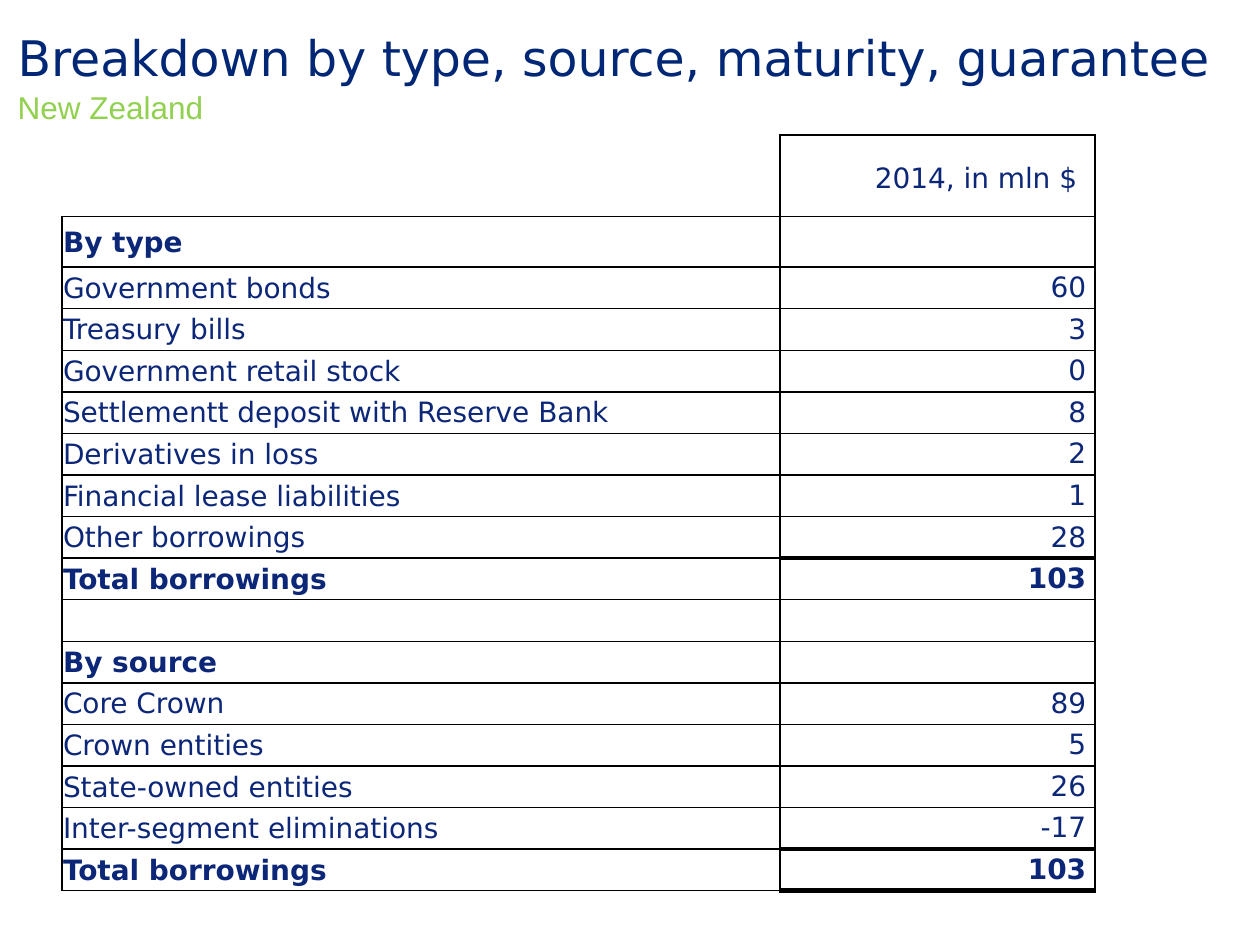
from pptx import Presentation
from pptx.dml.color import RGBColor
from pptx.enum.text import MSO_ANCHOR, MSO_AUTO_SIZE, PP_ALIGN
from pptx.oxml.ns import qn
from pptx.util import Inches, Pt
from lxml import etree

LEFT, RIGHT = PP_ALIGN.LEFT, PP_ALIGN.RIGHT
MIDDLE, BOTTOM = MSO_ANCHOR.MIDDLE, MSO_ANCHOR.BOTTOM
NO_AUTOFIT = MSO_AUTO_SIZE.NONE

NAVY = RGBColor(0x00, 0x27, 0x76)
INK = RGBColor(0x0C, 0x26, 0x78)
GREEN = RGBColor(0x92, 0xD0, 0x50)
WHITE = RGBColor(0xFF, 0xFF, 0xFF)
BLACK = RGBColor(0x00, 0x00, 0x00)
FONT = "DejaVu Sans"

TITLE_ONLY = 5
COLUMN_WIDTHS = (5.7, 2.5)
HEADER_HEIGHT, FIRST_GROUP_HEIGHT, ROW_HEIGHT = 0.65, 0.4, 0.33
THIN, THICK = 1, 3

ROWS = [
    ("", "2014, in mln $ "),
    ("By type", ""),
    ("Government bonds", "60"),
    ("Treasury bills", "3"),
    ("Government retail stock", "0"),
    ("Settlementt deposit with Reserve Bank", "8"),
    ("Derivatives in loss", "2"),
    ("Financial lease liabilities", "1"),
    ("Other borrowings", "28"),
    ("Total borrowings", "103"),
    ("", ""),
    ("By source", ""),
    ("Core Crown", "89"),
    ("Crown entities", "5"),
    ("State-owned entities", "26"),
    ("Inter-segment eliminations", "-17"),
    ("Total borrowings", "103"),
]
BOLD_LABELS = {"By type", "Total borrowings", "By source"}
# Horizontal rules around the totals, numbered by the row below them
THICK_RULES = {9, 16, 17}


def style_span(span, size, color, font=FONT, bold=False):
    span.font.size = Pt(size)
    span.font.name = font
    span.font.bold = bold
    span.font.color.rgb = color


def set_margins(box, left, top, right, bottom):
    box.margin_left, box.margin_top = Inches(left), Inches(top)
    box.margin_right, box.margin_bottom = Inches(right), Inches(bottom)


def add_title(slide, heading, country):
    title = slide.shapes.title
    title.left, title.top = Inches(0.01), Inches(-0.13)
    title.width, title.height = Inches(9.82), Inches(1.17)
    title.fill.solid()
    title.fill.fore_color.rgb = WHITE
    frame = title.text_frame
    frame.auto_size = NO_AUTOFIT
    frame.word_wrap = True
    frame.vertical_anchor = BOTTOM
    set_margins(frame, 0.13, 0, 0, 0.04)
    frame.text = f"{heading}\v{country}"
    para = frame.paragraphs[0]
    para.alignment = LEFT
    para.line_spacing = Pt(22.5)
    heading_span, country_span = para.runs
    style_span(heading_span, 28, NAVY)
    style_span(country_span, 18, GREEN, "Arial")


def set_borders(cell, widths):
    """Draw the sides L, R, T, B; a width of 0 hides a side."""
    properties = cell._tc.get_or_add_tcPr()
    for side, width in zip("LRTB", widths):
        line = etree.SubElement(properties, qn(f"a:ln{side}"), w=str(Pt(width)))
        if width:
            fill = etree.SubElement(line, qn("a:solidFill"))
            etree.SubElement(fill, qn("a:srgbClr"), val=str(BLACK))
        else:
            etree.SubElement(line, qn("a:noFill"))


def fill_cell(cell, text, is_label, bold):
    cell.fill.background()
    cell.vertical_anchor = MIDDLE
    if is_label or not text:
        set_margins(cell, 0.01, 0.01, 0.01, 0)
    else:
        set_margins(cell, 0.07, 0.03, 0.07, 0.03)
    cell.text = text
    para = cell.text_frame.paragraphs[0]
    para.alignment = LEFT if is_label else RIGHT
    for span in para.runs:
        style_span(span, 16, INK, bold=bold)


def border_widths(row, column):
    if (row, column) == (0, 0):
        return 0, THIN, 0, THIN
    top, bottom = (
        THICK if column == 1 and rule in THICK_RULES else THIN
        for rule in (row, row + 1)
    )
    return THIN, THIN, top, bottom


def add_borrowings_table(slide):
    heights = [HEADER_HEIGHT, FIRST_GROUP_HEIGHT]
    heights += [ROW_HEIGHT] * (len(ROWS) - len(heights))
    table = slide.shapes.add_table(
        len(ROWS), len(COLUMN_WIDTHS), Inches(0.49), Inches(1.07),
        Inches(sum(COLUMN_WIDTHS)), Inches(sum(heights))).table
    table.first_row = table.horz_banding = False
    for column, width in zip(table.columns, COLUMN_WIDTHS):
        column.width = Inches(width)
    for row, (texts, height) in enumerate(zip(ROWS, heights)):
        table.rows[row].height = Inches(height)
        for column, text in enumerate(texts):
            cell = table.cell(row, column)
            set_borders(cell, border_widths(row, column))
            fill_cell(cell, text, column == 0, texts[0] in BOLD_LABELS)
    # The header sits a little lower than the middle of its row
    table.cell(0, 1).text_frame.paragraphs[0].line_spacing = Pt(22)


def main():
    deck = Presentation()
    deck.slide_width, deck.slide_height = Inches(10), Inches(7.5)
    slide = deck.slides.add_slide(deck.slide_layouts[TITLE_ONLY])
    add_borrowings_table(slide)
    add_title(slide, "Breakdown by type, source, maturity, guarantee", "New Zealand")
    deck.save("out.pptx")


if __name__ == "__main__":
    main()
